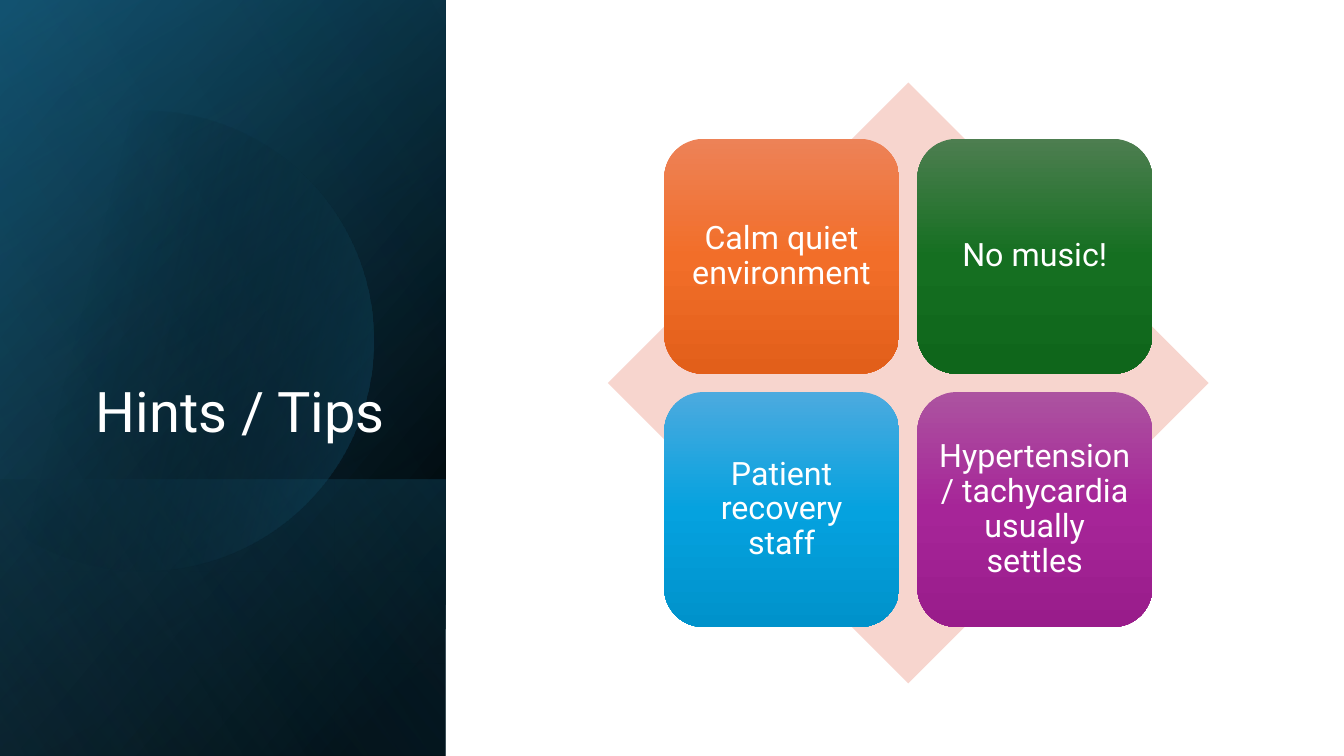
from math import acos, cos, degrees, radians, sin

from lxml.etree import SubElement
from pptx import Presentation
from pptx.dml.color import RGBColor
from pptx.enum.shapes import MSO_SHAPE
from pptx.enum.text import MSO_ANCHOR, PP_ALIGN
from pptx.oxml.ns import qn
from pptx.util import Cm, Pt

TITLE = "Hints / Tips"
TILES = [
    ("Calm quiet environment", ("ED8257", "F26E29", "E25F1A")),
    ("No music!", ("4D7E50", "156F21", "0F661B")),
    ("Patient recovery staff", ("4CAADF", "05A2DF", "0092CB")),
    ("Hypertension / tachycardia usually settles", ("AC53A0", "A62598", "991C8B")),
]
THEME = {
    "font": "Roboto",
    "text": "FFFFFF",
    "diamond": "F7D5CE",
    "title_size": 40,
    "tile_size": 23,
    "base": ([(8, "000000", 100), (100, "104862", 100)], 50),
    "tint": ([(0, "000000", 0), (99, "156082", 46)], 30),
    "footer": ([(2, "156082", 29), (100, "000000", 30)], 130),
    "disc": ([(29, "000000", 0), (100, "156082", 43)], 14),
    "sheen": ([(0, "000000", 0), (99, "46B1E1", 11)], 120),
}
SLIDE_W, SLIDE_H = 33.87, 19.05
PANEL_W, FOOTER_TOP = 11.23, 12.09
DISC_X, DISC_Y, DISC_R, DISC_LEFT = 3.63, 8.59, 5.79, -0.38
CENTER_X, CENTER_Y, DIAMOND = 22.89, 9.65, 15.14
TILE, GAP = 5.92, 0.46


def clean(sp):
    sp.shadow.inherit = False
    sp.line.fill.background()
    return sp


def gradient(sp, stops, angle):
    sp.fill.gradient()
    grad = sp._element.spPr.find(qn("a:gradFill"))
    grad.set("rotWithShape", "1")
    for child in list(grad):
        grad.remove(child)
    gs_list = SubElement(grad, qn("a:gsLst"))
    for pos, color, opacity in stops:
        gs = SubElement(gs_list, qn("a:gs"), pos=str(pos * 1000))
        clr = SubElement(gs, qn("a:srgbClr"), val=color)
        if opacity < 100:
            SubElement(clr, qn("a:alpha"), val=str(opacity * 1000))
    SubElement(grad, qn("a:lin"), ang=str(angle * 60000), scaled="0")


def add_panel(shapes, top, height, name):
    left = (PANEL_W - height) / 2
    mid = top + height / 2
    sp = clean(shapes.add_shape(MSO_SHAPE.RECTANGLE, Cm(left), Cm(mid - PANEL_W / 2),
                                Cm(height), Cm(PANEL_W)))
    sp.rotation = 90
    sp._element.spPr.find(qn("a:xfrm")).set("flipH", "1")
    gradient(sp, *THEME[name])


def add_disc(shapes):
    limit = degrees(acos((DISC_LEFT - DISC_X) / DISC_R))
    steps = 120
    angles = [radians(limit * (2 * i / steps - 1)) for i in range(steps + 1)]
    points = [(Cm(DISC_X + DISC_R * cos(a)), Cm(DISC_Y + DISC_R * sin(a))) for a in angles]
    builder = shapes.build_freeform(*points[0])
    builder.add_line_segments(points[1:], close=True)
    gradient(clean(builder.convert_to_shape()), *THEME["disc"])


def write(sp, text, size, align, anchor):
    tf = sp.text_frame
    tf.text = text
    tf.word_wrap = True
    tf.vertical_anchor = anchor
    p = tf.paragraphs[0]
    p.alignment = align
    p.line_spacing = 0.9
    font = p.runs[0].font
    font.name = THEME["font"]
    font.size = Pt(size)
    font.color.rgb = RGBColor.from_string(THEME["text"])
    return tf


def add_tile(shapes, index, text, colors):
    row, col = divmod(index, 2)
    left = CENTER_X - TILE - GAP / 2 + col * (TILE + GAP)
    top = CENTER_Y - TILE - GAP / 2 + row * (TILE + GAP)
    sp = clean(shapes.add_shape(MSO_SHAPE.ROUNDED_RECTANGLE, Cm(left), Cm(top),
                                Cm(TILE), Cm(TILE)))
    gradient(sp, [(pos, color, 100) for pos, color in zip((0, 50, 100), colors)], 90)
    tf = write(sp, text, THEME["tile_size"], PP_ALIGN.CENTER, MSO_ANCHOR.MIDDLE)
    tf.margin_left = tf.margin_right = Cm(0.2)
    tf.margin_top = tf.margin_bottom = Cm(0.25)


def main():
    prs = Presentation()
    prs.slide_width, prs.slide_height = Cm(SLIDE_W), Cm(SLIDE_H)
    shapes = prs.slides.add_slide(prs.slide_layouts[6]).shapes

    add_panel(shapes, 0, SLIDE_H, "base")
    add_panel(shapes, 0, SLIDE_H, "tint")
    add_panel(shapes, FOOTER_TOP, SLIDE_H - FOOTER_TOP, "footer")
    add_disc(shapes)
    add_panel(shapes, 0, SLIDE_H, "sheen")

    title = shapes.add_textbox(Cm(1.63), Cm(4.67), Cm(8.66), Cm(6.65))
    tf = write(title, TITLE, THEME["title_size"], PP_ALIGN.RIGHT, MSO_ANCHOR.BOTTOM)
    tf.margin_right = Cm(0.6)

    diamond = clean(shapes.add_shape(MSO_SHAPE.DIAMOND, Cm(CENTER_X - DIAMOND / 2),
                                     Cm(CENTER_Y - DIAMOND / 2), Cm(DIAMOND), Cm(DIAMOND)))
    diamond.fill.solid()
    diamond.fill.fore_color.rgb = RGBColor.from_string(THEME["diamond"])
    for index, (text, colors) in enumerate(TILES):
        add_tile(shapes, index, text, colors)

    prs.save("out.pptx")


if __name__ == "__main__":
    main()
